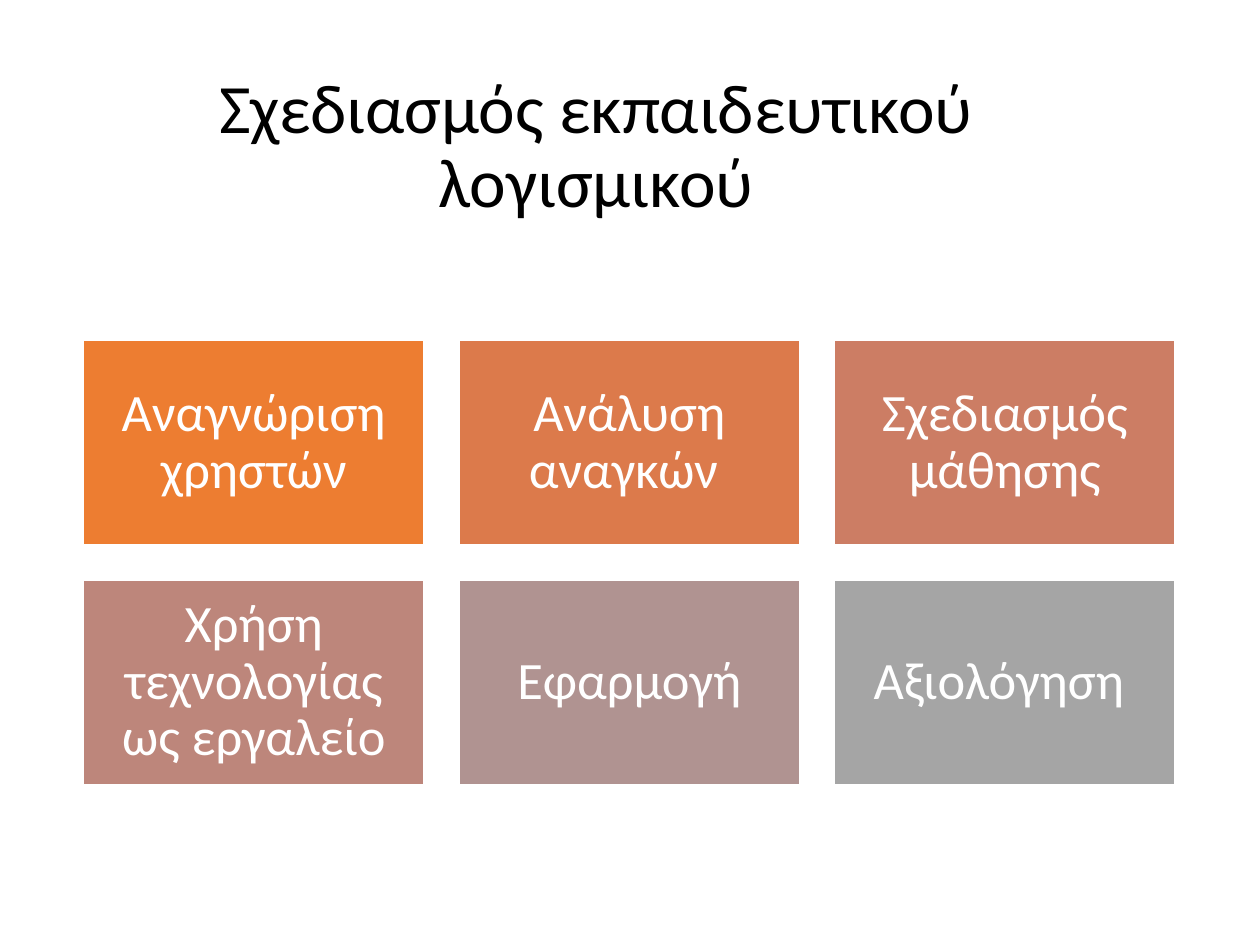
from pptx import Presentation
from pptx.dml.color import RGBColor
from pptx.enum.shapes import MSO_SHAPE
from pptx.enum.text import MSO_ANCHOR, PP_ALIGN
from pptx.util import Inches, Pt

TITLE = "Σχεδιασμός εκπαιδευτικού λογισμικού"
STAGES = [
    ("Αναγνώριση χρηστών", "ED7D31"),
    ("Ανάλυση αναγκών ", "DC7A4B"),
    ("Σχεδιασμός μάθησης", "CC7D64"),
    ("Χρήση τεχνολογίας ως εργαλείο", "BD867B"),
    ("Εφαρμογή", "B09391"),
    ("Αξιολόγηση ", "A5A5A5"),
]

COLUMNS = 3
LEFT, TOP = 0.66, 2.7
WIDTH, HEIGHT = 2.71, 1.63
GAP = 0.27
STAGE_INSET = 0.12
TITLE_FONT = {"name": "Calibri", "size": Pt(39.6)}
STAGE_FONT = {"name": "Calibri", "size": Pt(30)}
PARAGRAPH = {"alignment": PP_ALIGN.CENTER, "line_spacing": 0.9}
FRAME = {"word_wrap": True, "vertical_anchor": MSO_ANCHOR.MIDDLE}
STAGE_MARGINS = {
    f"margin_{side}": Inches(STAGE_INSET)
    for side in ("left", "top", "right", "bottom")
}


def color(value):
    return RGBColor.from_string(value)


def apply(target, values):
    for name, value in values.items():
        setattr(target, name, value)


def write(frame, text, font, ink):
    apply(frame, FRAME)
    paragraph = frame.paragraphs[0]
    apply(paragraph, PARAGRAPH)
    run = paragraph.add_run()
    run.text = text
    apply(run.font, font)
    run.font.color.rgb = color(ink)


def add_stage(slide, index, label, fill):
    row, column = divmod(index, COLUMNS)
    stage = slide.shapes.add_shape(
        MSO_SHAPE.RECTANGLE,
        Inches(LEFT + column * (WIDTH + GAP)),
        Inches(TOP + row * (HEIGHT + GAP)),
        Inches(WIDTH),
        Inches(HEIGHT),
    )
    stage.shadow.inherit = False
    stage.fill.solid()
    stage.fill.fore_color.rgb = color(fill)
    stage.line.color.rgb = color("FFFFFF")
    stage.line.width = Pt(1.5)
    apply(stage.text_frame, STAGE_MARGINS)
    write(stage.text_frame, label, STAGE_FONT, "FFFFFF")


def main():
    deck = Presentation()
    deck.slide_width, deck.slide_height = Inches(10), Inches(7.5)
    slide = deck.slides.add_slide(deck.slide_layouts[6])
    title = slide.shapes.add_textbox(
        Inches(0.51), Inches(0.6), Inches(8.44), Inches(1.15)
    )
    write(title.text_frame, TITLE, TITLE_FONT, "000000")
    for index, (label, fill) in enumerate(STAGES):
        add_stage(slide, index, label, fill)
    deck.save("out.pptx")


if __name__ == "__main__":
    main()
